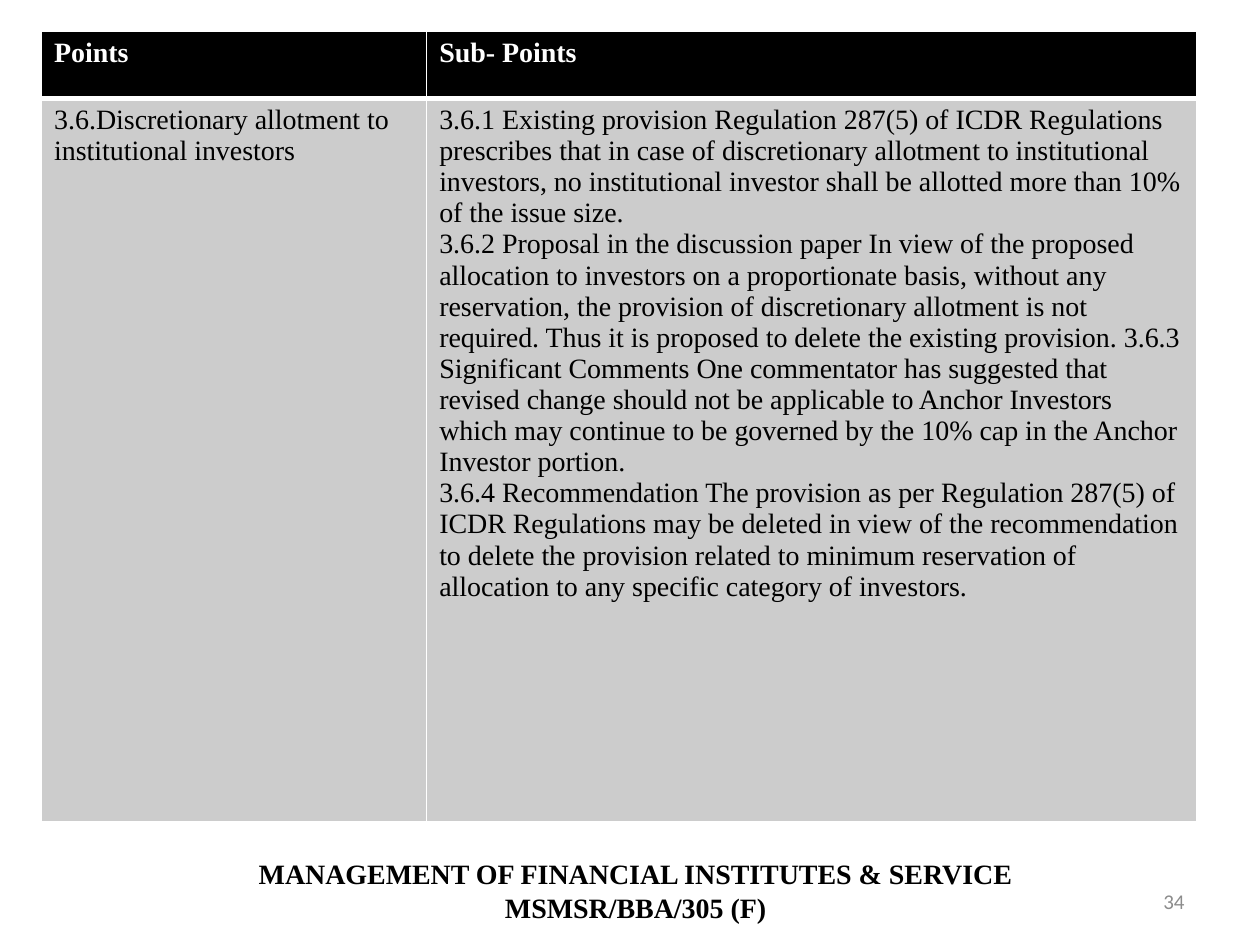
from lxml import etree
from pptx import Presentation, util as u
from pptx.dml.color import RGBColor
from pptx.enum import text
from pptx.oxml import ns

SERIF = "Times New Roman"
ALIGN = text.PP_ALIGN
COLUMN = u.Inches(9.17 / 3)  # the table is three columns wide: one for points, two for sub-points


def write(frame, paragraphs, color, align=ALIGN.LEFT, **font):
    """Fill a text frame, one string per paragraph, all in one format."""
    frame.word_wrap = True
    for index, words in enumerate(paragraphs):
        para = frame.add_paragraph() if index else frame.paragraphs[0]
        para.text = words
        para.alignment = align
        for span in para.runs:
            for name, value in font.items():
                setattr(span.font, name, value)
            span.font.color.rgb = RGBColor.from_string(color)


def add_borders(cell, widths, color="FFFFFF"):
    """Draw cell borders; widths maps a side (L, R, T, B) to points."""
    properties = cell._tc.get_or_add_tcPr()
    for index, (side, width) in enumerate(widths.items()):
        line = etree.Element(ns.qn(f"a:ln{side}"), w=str(u.Pt(width)))
        fill = etree.SubElement(line, ns.qn("a:solidFill"))
        etree.SubElement(fill, ns.qn("a:srgbClr"), val=color)
        properties.insert(index, line)


deck = Presentation()
deck.slide_width, deck.slide_height = u.Inches(10), u.Inches(7.5)
page = deck.slides.add_slide(deck.slide_layouts[6])

rows = [
    [["Points"], ["Sub- Points"]],
    [
        ["3.6.Discretionary allotment to institutional investors"],
        [
            "3.6.1 Existing provision Regulation 287(5) of ICDR Regulations prescribes that in case of "
            "discretionary allotment to institutional investors, no institutional investor shall be "
            "allotted more than 10% of the issue size.",
            "3.6.2 Proposal in the discussion paper In view of the proposed allocation to investors on a "
            "proportionate basis, without any reservation, the provision of discretionary allotment is not "
            "required. Thus it is proposed to delete the existing provision. 3.6.3 Significant Comments One "
            "commentator has suggested that revised change should not be applicable to Anchor Investors "
            "which may continue to be governed by the 10% cap in the Anchor Investor portion.",
            "3.6.4 Recommendation The provision as per Regulation 287(5) of ICDR Regulations may be deleted "
            "in view of the recommendation to delete the provision related to minimum reservation of "
            "allocation to any specific category of investors.",
        ],
    ],
]
row_styles = [
    {"height": 0.53, "fill": "000000", "color": "FFFFFF", "bold": True, "top": 1, "bottom": 3},
    {"height": 5.74, "fill": "CCCCCC", "color": "000000", "bold": False, "top": 3, "bottom": 1},
]

table = page.shapes.add_table(
    2, 2, u.Inches(0.33), u.Inches(0.25), 3 * COLUMN, u.Inches(6.27)
).table
for column, share in zip(table.columns, (1, 2)):
    column.width = share * COLUMN

for row_index, (row, style) in enumerate(zip(rows, row_styles)):
    table.rows[row_index].height = u.Inches(style["height"])
    for column_index, paragraphs in enumerate(row):
        cell = table.cell(row_index, column_index)
        cell.fill.solid()
        cell.fill.fore_color.rgb = RGBColor.from_string(style["fill"])
        add_borders(cell, {"L": 1, "R": 1, "T": style["top"], "B": style["bottom"]})
        write(cell.text_frame, paragraphs, style["color"],
              name=SERIF, size=u.Pt(16), bold=style["bold"])

course = page.shapes.add_textbox(u.Inches(0.84), u.Inches(6.75), u.Inches(8.41), u.Inches(0.64))
write(course.text_frame, ["MANAGEMENT OF FINANCIAL INSTITUTES & SERVICE\vMSMSR/BBA/305 (F)"],
      "000000", ALIGN.CENTER, name=SERIF, size=u.Pt(16), bold=True)
course.text_frame.auto_size = text.MSO_AUTO_SIZE.SHAPE_TO_FIT_TEXT

number = page.shapes.add_textbox(u.Inches(7.17), u.Inches(6.95), u.Inches(2.33), u.Inches(0.4))
write(number.text_frame, ["34"], "8C8C8C", ALIGN.RIGHT, name="Calibri", size=u.Pt(12))
number.text_frame.vertical_anchor = text.MSO_ANCHOR.MIDDLE

deck.save("out.pptx")
